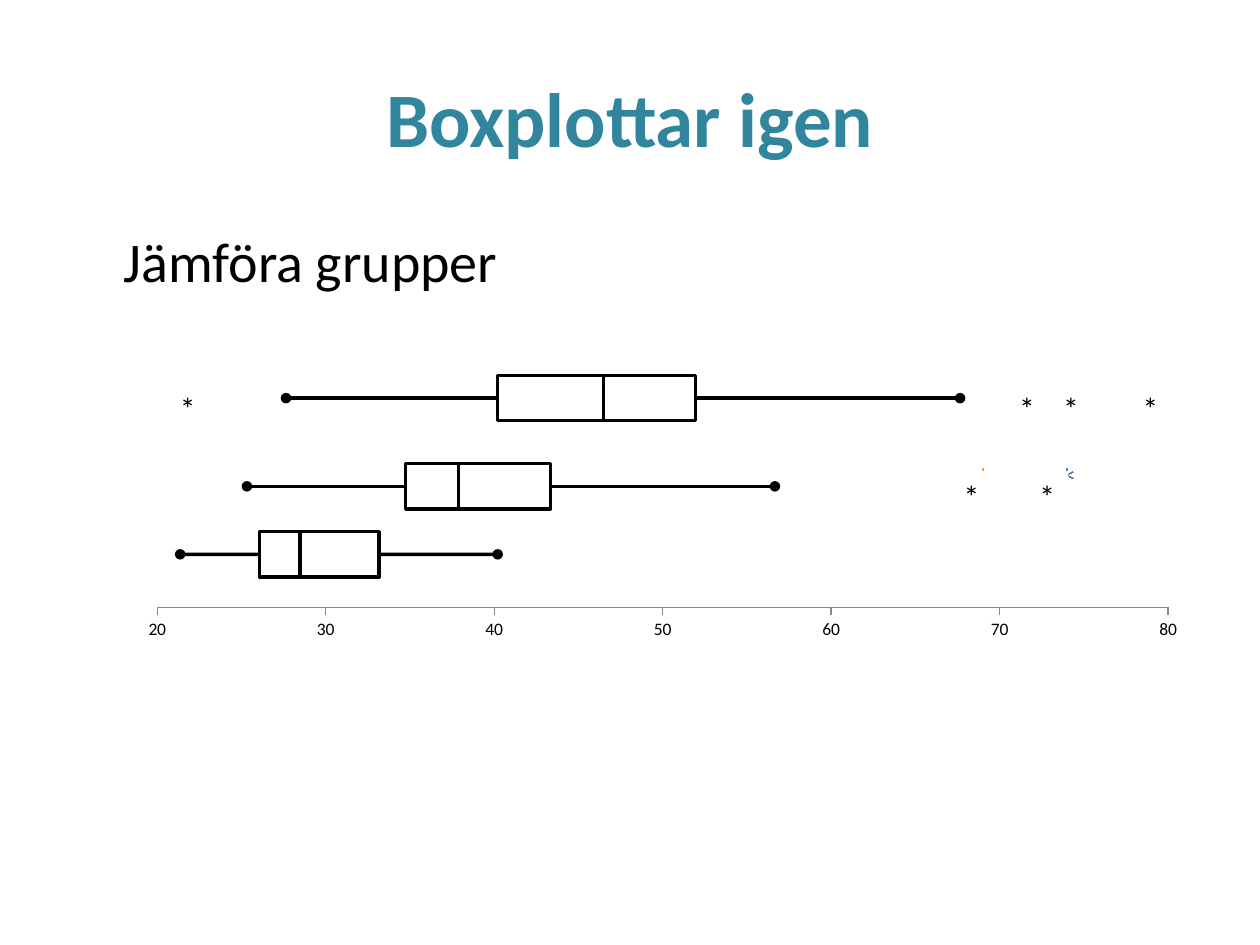
import pptx
import pptx.chart.data
import pptx.dml.color
import pptx.enum.chart
import pptx.enum.dml
import pptx.enum.shapes
import pptx.enum.text
import pptx.util
from lxml import etree

Inches = pptx.util.Inches
Pt = pptx.util.Pt

COLORS = {"title": "31859C", "ink": "000000", "paper": "FFFFFF", "axis": "888888",
          "Series 1": "F79646", "Series 2": "4F81BD"}
FONT = "Calibri"
TITLE = "Boxplottar igen"
BODY = "Jämföra grupper"
BOX_HEIGHT = 0.36
BOXPLOTS = [
    {"top": 3.68, "low": 1.96, "q1": 3.22, "median": 3.64, "q3": 4.37, "high": 6.15},
    {"top": 2.98, "low": 2.27, "q1": 3.95, "median": 4.79, "q3": 5.52, "high": 7.62},
    {"top": 4.22, "low": 1.43, "q1": 2.06, "median": 2.38, "q3": 3.01, "high": 3.95},
]
OUTLIERS = [
    {"top": 3.04, "lefts": [7.99, 8.34, 8.97, 1.33], "filled": False},
    {"top": 3.74, "lefts": [7.55, 8.15], "filled": True},
]
OUTLIER_SIZE = (0.33, 0.4)
POINTS = [("Series 1", 69, 100), ("Series 2", 74, 100)]
CHART_FRAME = (1.01, 3.63, 8.5, 1.48)
PLOT_AREA = {"x": 0.028, "y": 0.095, "w": 0.944, "h": 0.71}
CATEGORY_AXIS = {"minimum_scale": 20, "maximum_scale": 80, "major_unit": 10,
                 "major_tick_mark": pptx.enum.chart.XL_TICK_MARK.OUTSIDE,
                 "minor_tick_mark": pptx.enum.chart.XL_TICK_MARK.NONE,
                 "has_major_gridlines": False}
VALUE_AXIS = {"minimum_scale": 33, "maximum_scale": 100, "visible": False,
              "has_major_gridlines": False}


def color(name):
    return pptx.dml.color.RGBColor.from_string(COLORS[name])


def set_all(target, values):
    for name, value in values.items():
        setattr(target, name, value)


def format_font(font, size, color_name, bold=False):
    set_all(font, {"name": FONT, "size": Pt(size), "bold": bold})
    font.color.rgb = color(color_name)


def fill_placeholder(placeholder, frame, text, size, color_name, bold=False):
    set_all(placeholder, dict(zip(("left", "top", "width", "height"), map(Inches, frame))))
    placeholder.text_frame.text = text
    paragraph = placeholder.text_frame.paragraphs[0]
    format_font(paragraph.runs[0].font, size, color_name, bold)
    return paragraph


def add_scatter(slide):
    data = pptx.chart.data.XyChartData()
    for name, x, y in POINTS:
        data.add_series(name).add_data_point(x, y)
    chart = slide.shapes.add_chart(pptx.enum.chart.XL_CHART_TYPE.XY_SCATTER_LINES,
                                   *map(Inches, CHART_FRAME), data).chart
    set_all(chart, {"has_legend": False, "has_title": False})
    format_font(chart.font, 10, "ink")
    set_all(chart.category_axis, CATEGORY_AXIS)
    set_all(chart.value_axis, VALUE_AXIS)
    chart.category_axis.format.line.color.rgb = color("axis")
    for series in chart.plots[0].series:
        series.smooth = False
        series.format.line.color.rgb = color(series.name)
        set_all(series.marker, {"style": pptx.enum.chart.XL_MARKER_STYLE.STAR, "size": 7})
        series.marker.format.fill.background()
        series.marker.format.line.color.rgb = color(series.name)
    plot_area = chart.plots[0]._element.getparent()
    for old_layout in plot_area.findall(pptx.oxml.ns.qn("c:layout")):
        plot_area.remove(old_layout)
    layout = etree.Element(pptx.oxml.ns.qn("c:layout"))
    manual = etree.SubElement(layout, pptx.oxml.ns.qn("c:manualLayout"))
    settings = {"layoutTarget": "inner", "xMode": "edge", "yMode": "edge", **PLOT_AREA}
    for tag, value in settings.items():
        etree.SubElement(manual, pptx.oxml.ns.qn("c:" + tag), val=str(value))
    plot_area.insert(0, layout)


def add_line(slide, start_x, start_y, end_x, end_y, tail=None):
    line = slide.shapes.add_connector(pptx.enum.shapes.MSO_CONNECTOR.STRAIGHT,
                                      *map(Inches, (start_x, start_y, end_x, end_y)))
    line.line.color.rgb = color("ink")
    line.line.width = Pt(2)
    if tail:
        etree.SubElement(line.line._get_or_add_ln(), pptx.oxml.ns.qn("a:tailEnd"), type=tail)
    etree.SubElement(line._element.spPr, pptx.oxml.ns.qn("a:effectLst"))
    return line


def add_boxplot(slide, plot):
    top, middle, bottom = (plot["top"] + BOX_HEIGHT * part for part in (0, 0.5, 1))
    box = slide.shapes.add_shape(
        pptx.enum.shapes.MSO_SHAPE.RECTANGLE,
        *map(Inches, (plot["q1"], top, plot["q3"] - plot["q1"], BOX_HEIGHT)))
    box.shadow.inherit = False
    box.fill.background()
    box.line.color.rgb = color("ink")
    box.line.width = Pt(2)
    for quartile, end, side in (("q1", "low", 1), ("q3", "high", 3)):
        whisker = add_line(slide, plot[quartile], middle, plot[end], middle, "oval")
        whisker.begin_connect(box, side)
    add_line(slide, plot["median"], top, plot["median"], bottom)


def add_outlier(slide, left, top, filled):
    box = slide.shapes.add_textbox(*map(Inches, (left, top, *OUTLIER_SIZE)))
    if filled:
        box.fill.solid()
        box.fill.fore_color.rgb = color("paper")
    frame = box.text_frame
    frame.text = "*"
    set_all(frame, {"word_wrap": False,
                    "auto_size": pptx.enum.text.MSO_AUTO_SIZE.SHAPE_TO_FIT_TEXT})
    format_font(frame.paragraphs[0].runs[0].font, 18, "ink")


def main():
    presentation = pptx.Presentation()
    set_all(presentation, {"slide_width": Inches(10), "slide_height": Inches(7.5)})
    slide = presentation.slides.add_slide(presentation.slide_layouts[1])
    title = fill_placeholder(slide.shapes.title, (0.5, 0.3, 9, 1.25), TITLE, 44, "title", True)
    title.alignment = pptx.enum.text.PP_ALIGN.CENTER
    body = fill_placeholder(slide.placeholders[1], (0.5, 1.75, 9, 4.95), BODY, 32, "ink")
    properties = body._p.get_or_add_pPr()
    properties.set("marL", str(Inches(0.38)))
    properties.set("indent", "0")
    etree.SubElement(properties, pptx.oxml.ns.qn("a:buNone"))
    add_scatter(slide)
    for plot in BOXPLOTS:
        add_boxplot(slide, plot)
    for row in OUTLIERS:
        for left in row["lefts"]:
            add_outlier(slide, left, row["top"], row["filled"])
    presentation.save("out.pptx")


if __name__ == "__main__":
    main()
